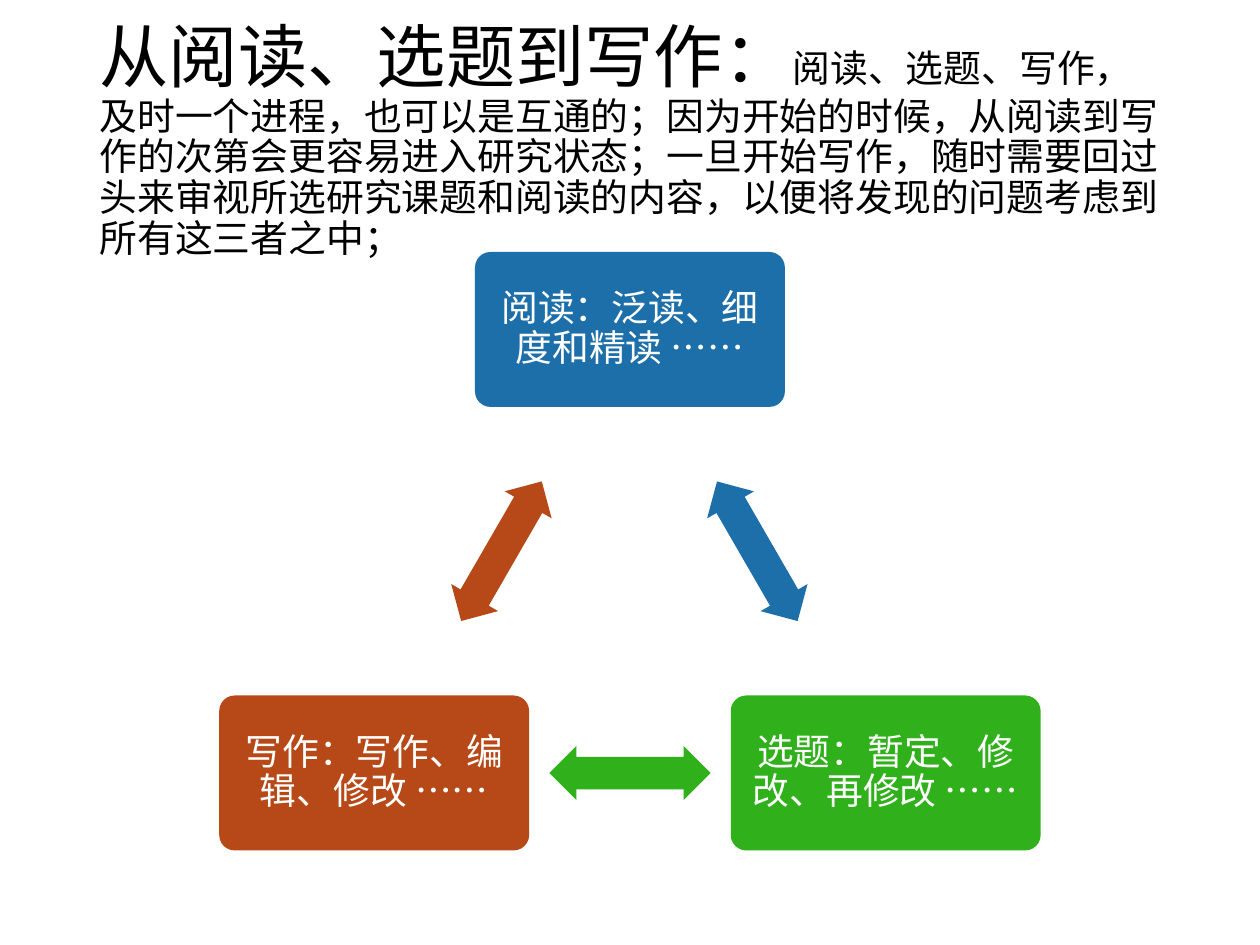
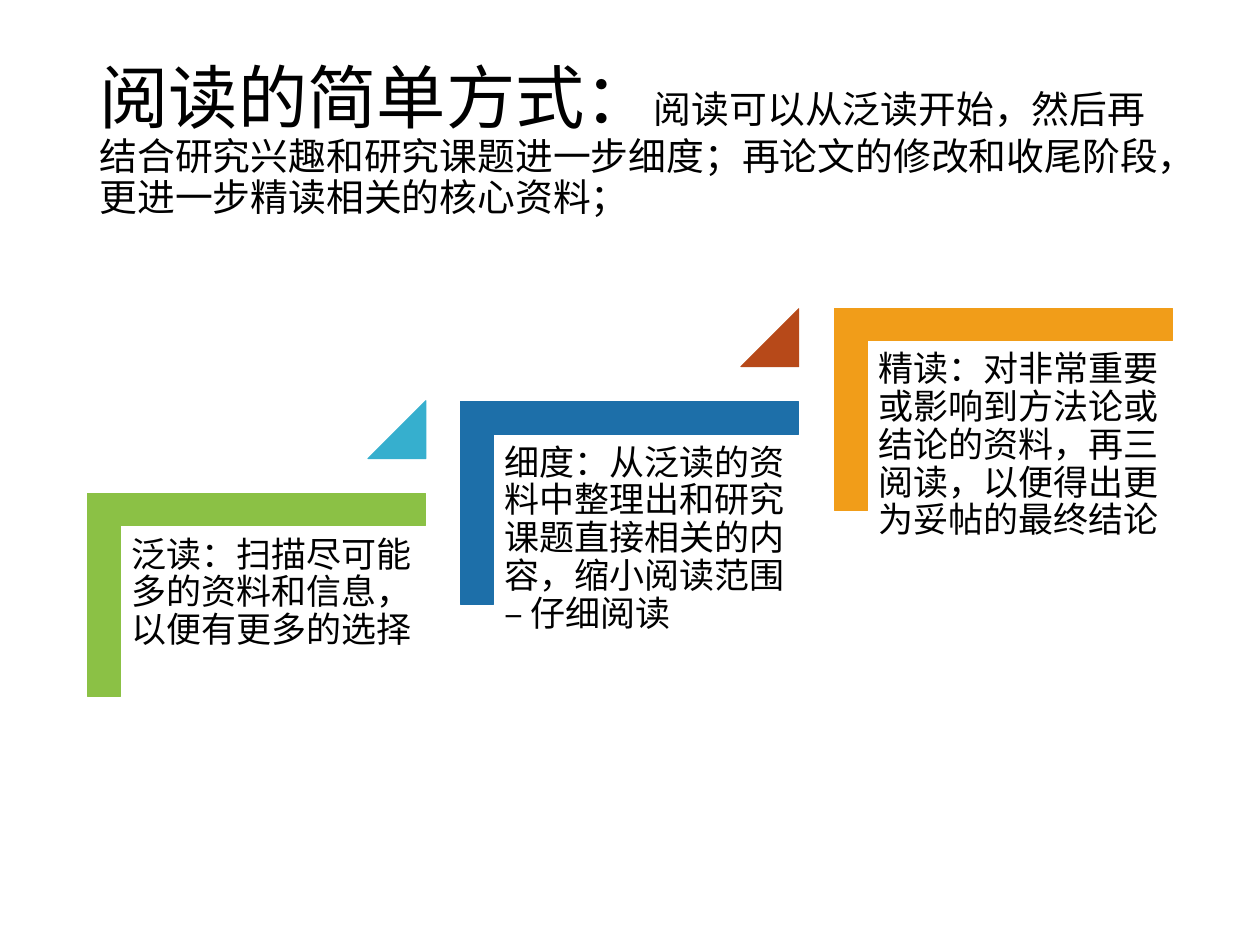
from dataclasses import dataclass

from pptx import Presentation
from pptx.dml.color import RGBColor as Rgb
from pptx.enum.lang import MSO_LANGUAGE_ID as Lang
from pptx.enum.shapes import MSO_SHAPE as Shape
from pptx.enum.text import MSO_ANCHOR as Anchor, MSO_AUTO_SIZE as AutoSize, PP_ALIGN as Align
from pptx.util import Emu, Pt

EMU_PER_PX = 9144


@dataclass(frozen=True)
class Theme:
    """Colours, font and type sizes of the deck."""
    font: str = "Times New Roman"
    ink: str = "000000"
    paper: str = "FFFFFF"
    blue: str = "1D6FA9"
    green: str = "30B01B"
    rust: str = "B74919"
    lime: str = "8BC145"
    sky: str = "36AFCE"
    amber: str = "F19D19"
    heading: float = 39.6
    summary: float = 21.6
    node: float = 21
    step: float = 20


def px(*lengths):
    """Turn pixel lengths into EMU."""
    return [Emu(length * EMU_PER_PX) for length in lengths]


def write(frame, *runs, color, font, align=Align.LEFT, anchor=Anchor.TOP, inset=10):
    """Fill a text frame with one paragraph of (text, size) runs."""
    frame.word_wrap = True
    frame.auto_size = AutoSize.NONE
    frame.vertical_anchor = anchor
    frame.margin_left, frame.margin_top, frame.margin_right, frame.margin_bottom = px(
        inset, inset // 2 if inset == 10 else inset, inset, inset // 2 if inset == 10 else inset)
    paragraph = frame.paragraphs[0]
    paragraph.alignment = align
    paragraph.line_spacing = 0.9
    for text, size in runs:
        run = paragraph.add_run()
        run.text = text
        run.font.name = font
        run.font.size = Pt(size)
        run.font.color.rgb = Rgb.from_string(color)
        run.font.language_id = Lang.SIMPLIFIED_CHINESE


class Deck:
    """Holds the style and the current slide."""

    def __init__(self, theme):
        """Start an empty 4:3 deck."""
        self.theme = theme
        self.show = Presentation()
        self.show.slide_width, self.show.slide_height = px(1000, 750)
        self.slide = None

    def start(self, heading, summary):
        """Add a slide whose title joins a heading and its summary."""
        self.slide = self.show.slides.add_slide(self.show.slide_layouts[5])
        title = self.slide.shapes.title
        title.left, title.top, title.width, title.height = px(69, 40, 862, 145)
        write(title.text_frame, (heading, self.theme.heading), (summary, self.theme.summary),
              color=self.theme.ink, font=self.theme.font, anchor=Anchor.MIDDLE)

    def block(self, kind, box, color, adjust, turn=0, outline=False):
        """Draw a filled preset shape."""
        shape = self.slide.shapes.add_shape(kind, *px(*box))
        shape.shadow.inherit = False
        shape.rotation = turn
        for index, value in enumerate(adjust):
            shape.adjustments[index] = value
        shape.fill.solid()
        shape.fill.fore_color.rgb = Rgb.from_string(color)
        if outline:
            shape.line.color.rgb = Rgb.from_string(color)
            shape.line.width = Pt(0.5)
        else:
            shape.line.fill.background()
        return shape

    def node(self, center, text, color):
        """Draw a labelled rounded box around its centre."""
        x, y = center
        box = self.block(Shape.ROUNDED_RECTANGLE, (x - 123, y - 61, 246, 123), color, [0.1])
        write(box.text_frame, (text, self.theme.node), color=self.theme.paper,
              font=self.theme.font, align=Align.CENTER, anchor=Anchor.MIDDLE, inset=9)

    def link(self, start, end, turn, color):
        """Draw a double arrow halfway between two centres."""
        x, y = ((a + b) // 2 for a, b in zip(start, end))
        self.block(Shape.LEFT_RIGHT_ARROW, (x - 64, y - 21, 128, 43), color, [0.6, 0.5], turn)

    def step(self, left, top, text, color):
        """Draw a corner bracket with its text."""
        self.block(Shape.CORNER, (left, top, 161, 268), color, [0.161, 0.161], 90, True)
        note = self.slide.shapes.add_textbox(*px(left - 27, top + 80, 242, 212))
        write(note.text_frame, (text, self.theme.step), color=self.theme.ink,
              font=self.theme.font, inset=8)

    def rise(self, left, top, color):
        """Draw the triangle that leads up to the next step."""
        self.block(Shape.ISOSCELES_TRIANGLE, (left + 169, top - 20, 46, 46), color, [1], 0, True)


def draw_cycle(deck):
    """Reading, topic and writing as a cycle."""
    theme = deck.theme
    deck.start("从阅读、选题到写作：",
               "阅读、选题、写作，及时一个进程，也可以是互通的；因为开始的时候，从阅读到写作的次第会更容易进入"
               "研究状态；一旦开始写作，随时需要回过头来审视所选研究课题和阅读的内容，以便将发现的问题考虑到"
               "所有这三者之中；")
    stages = [((500, 261), "阅读：泛读、细度和精读 ……", theme.blue),
              ((703, 613), "选题：暂定、修改、再修改 ……", theme.green),
              ((297, 613), "写作：写作、编辑、修改 ……", theme.rust)]
    for index, (center, text, color) in enumerate(stages):
        following = stages[(index + 1) % len(stages)][0]
        deck.node(center, text, color)
        deck.link(center, following, 60 + 120 * index, color)


def draw_steps(deck):
    """Three ways of reading as rising steps."""
    theme = deck.theme
    deck.start("阅读的简单方式：",
               "阅读可以从泛读开始，然后再结合研究兴趣和研究课题进一步细度；再论文的修改和收尾阶段，"
               "更进一步精读相关的核心资料；")
    readings = [("泛读：扫描尽可能多的资料和信息，以便有更多的选择", theme.lime, theme.sky),
                ("细度：从泛读的资料中整理出和研究课题直接相关的内容，缩小阅读范围 – 仔细阅读",
                 theme.blue, theme.rust),
                ("精读：对非常重要或影响到方法论或结论的资料，再三阅读，以便得出更为妥帖的最终结论",
                 theme.amber, None)]
    for index, (text, color, rise_color) in enumerate(readings):
        left, top = 123 + 593 * index // 2, 338 - 147 * index // 2
        deck.step(left, top, text, color)
        if rise_color:
            deck.rise(left, top, rise_color)


def main():
    """Build and save the deck."""
    deck = Deck(Theme())
    draw_cycle(deck)
    draw_steps(deck)
    deck.show.save("out.pptx")


if __name__ == "__main__":
    main()
